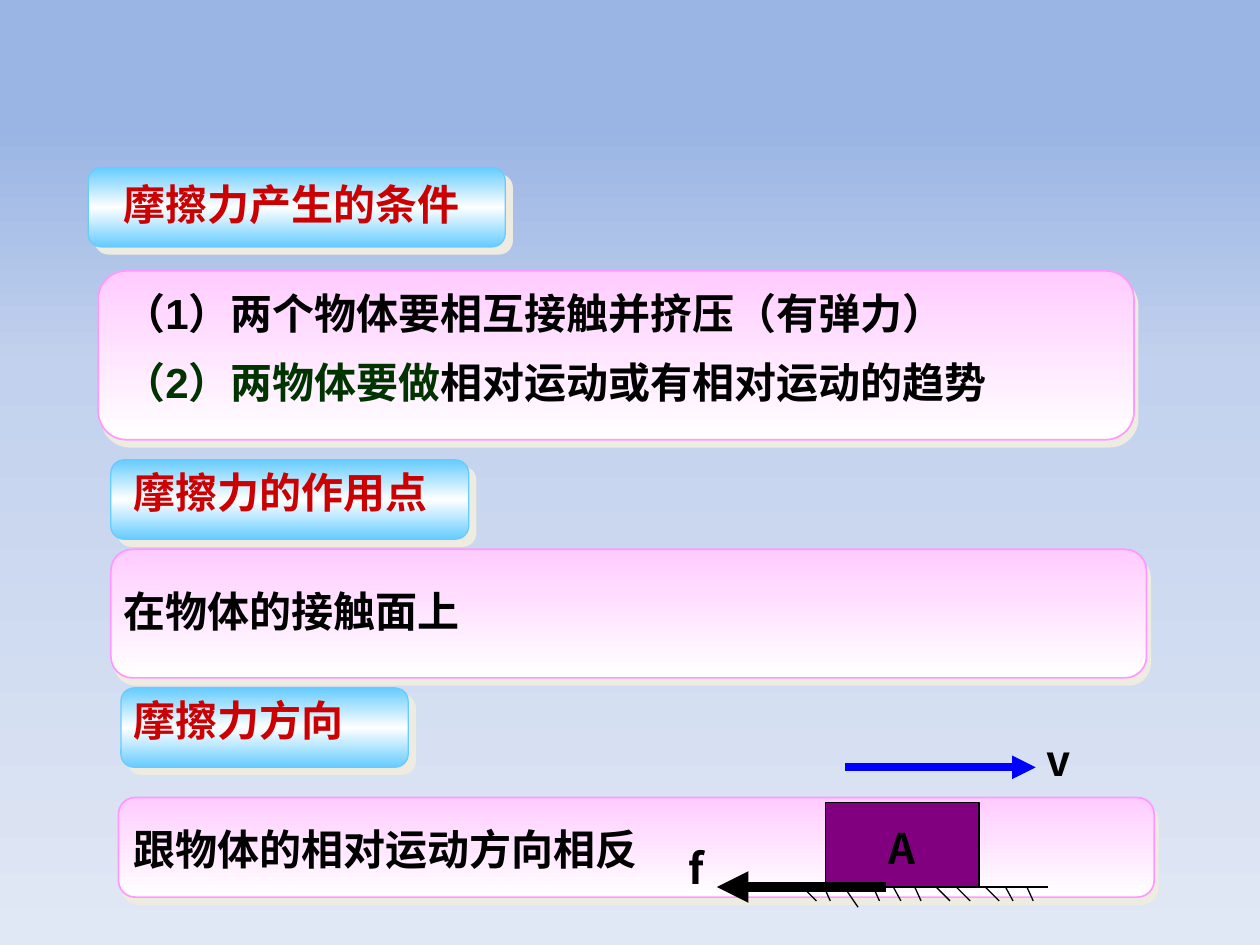
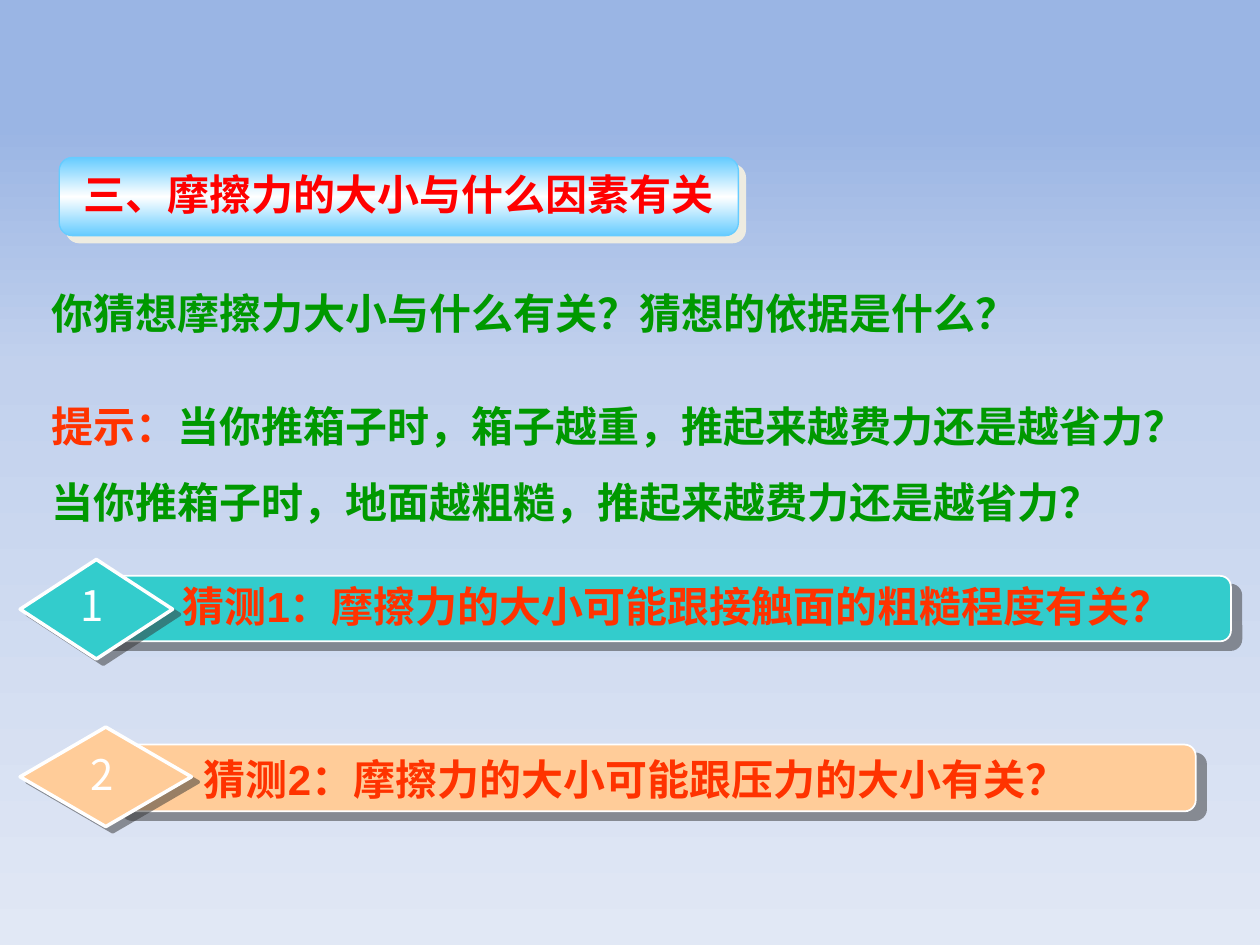
"""Build two slides on the conditions, direction and size of friction."""
import pptx
import pptx.util
import pptx.dml.color
import pptx.enum.shapes
import pptx.enum.text
import pptx.oxml
import pptx.oxml.ns
import lxml.etree

SHAPE = pptx.enum.shapes.MSO_SHAPE
ALIGN = pptx.enum.text.PP_ALIGN
QN = pptx.oxml.ns.qn

HUES = {
    "sky": "9AB5E4", "haze": "C2D1ED", "mist": "E1E8F5",
    "azure": "66CCFF", "white": "FFFFFF", "pink": "FFCCFF", "rose": "FF99FF",
    "cream": "EEECE1", "smoke": "333333", "black": "000000", "red": "CC0000",
    "bright": "FF0000", "flame": "FF3300", "pine": "003300", "green": "009900",
    "plum": "800080", "blue": "0000FF", "teal": "33CCCC", "peach": "FFCC99",
}
SKY = [(13, "sky"), (39, "haze"), (100, "mist")]
GLOSS = [(0, "azure"), (50, "white"), (100, "azure")]
BLUSH = [(0, "pink"), (100, "white")]
ARIAL, NOTO = "Arial", "Noto Sans CJK SC"
COLS, ROWS = 10, 7.5

LABEL = {"fill": GLOSS, "line": ("azure", 0.75), "shade": ("cream", 100, 5.7, 45)}
PANEL = {"fill": BLUSH, "line": ("rose", 1), "shade": ("cream", 100, 4.5, 63)}

LABELS = [(0.7, 1.33, 3.31, 0.63), (0.88, 3.65, 2.84, 0.63), (0.96, 5.46, 2.28, 0.63)]
PANELS = [(0.78, 2.15, 8.22, 1.34), (0.88, 4.36, 8.22, 1.02), (0.94, 6.33, 8.22, 0.79)]
CAUSE = ("摩擦力产生的条件", (0.88, 1.37, 3.39, 0.51))
RULES = [
    [("（1）两个物体要相互接触并挤压（有弹力）", "black")],
    [("（2）两物体要做", "pine"), ("相对运动或有相对运动的趋势", "black")],
]
NOTES = [
    ("摩擦力的作用点", "red", (0.96, 3.65, 2.91, 0.51)),
    ("在物体的接触面上", "black", (0.88, 4.6, 3.15, 0.5)),
    ("摩擦力方向", "red", (0.96, 5.46, 2.28, 0.51)),
    ("跟物体的相对运动方向相反", "black", (0.96, 6.49, 4.57, 0.5)),
]
BLOCK = (6.55, 6.37, 1.22, 0.67)
FLOOR = 7.04
HATCH = [(6.37, 0.11, 0.11), (6.54, 0.05, 0.11), (6.7, 0.11, 0.16), (6.93, 0.05, 0.11),
         (7.09, 0.06, 0.11), (7.26, 0.05, 0.11), (7.43, 0.11, 0.11), (7.59, 0.11, 0.11),
         (7.82, 0.11, 0.11), (7.98, 0.06, 0.11), (8.15, 0.05, 0.11)]
MARKS = [("f", (5.37, 6.64, 0.53, 0.51)), ("A", (6.95, 6.48, 0.45, 0.51)),
         ("v", (8.21, 5.78, 0.45, 0.51))]

TOPIC = ("三、摩擦力的大小与什么因素有关", (0.08, 1.29, 6.17, 0.51))
PLATE = (0.47, 1.25, 5.39, 0.62)
ASK = ("你猜想摩擦力大小与什么有关？猜想的依据是什么？", (0.31, 2.23, 9.42, 0.51))
HINT = [[("提示：", "flame"),
         ("当你推箱子时，箱子越重，推起来越费力还是越省力？当你推箱子时，地面越粗糙，推起来越费力还是越省力？",
          "green")]]
GUESS = [
    {"hue": "teal", "bar": (0.63, 4.57, 9.14, 0.52), "gem": (0.16, 4.44, 1.21, 0.79),
     "text": "猜测1：摩擦力的大小可能跟接触面的粗糙程度有关？", "box": (1.17, 4.56, 8.41, 0.91),
     "align": ALIGN.CENTER, "num": (0.44, 4.55, 0.58, 0.5)},
    {"hue": "peach", "bar": (0.88, 5.91, 8.61, 0.53), "gem": (0.16, 5.77, 1.36, 0.79),
     "text": "猜测2：摩擦力的大小可能跟压力的大小有关？", "box": (1.52, 5.93, 8.24, 0.51),
     "align": ALIGN.LEFT, "num": (0.46, 5.89, 0.7, 0.51)},
]

deck = pptx.Presentation()
deck.slide_width = pptx.util.Inches(COLS)
deck.slide_height = pptx.util.Inches(ROWS)
UNIT = deck.slide_width // COLS


def span(*parts):
    """Turn grid lengths into slide units."""
    return [round(part * UNIT) for part in parts]


def tint(name):
    """Give the colour of a name."""
    return pptx.dml.color.RGBColor.from_string(HUES[name])


def node(root, tag, **attrs):
    """Add a child element."""
    return lxml.etree.SubElement(root, QN(tag), {k: str(v) for k, v in attrs.items()})


def blend(fill, root, stops):
    """Fill from top to bottom through the stops."""
    fill.gradient()
    fill.gradient_angle = 270
    bands = next(root.iter(QN("a:gsLst")))
    for old in list(bands):
        bands.remove(old)
    for pos, name in stops:
        node(node(bands, "a:gs", pos=pos * 1000), "a:srgbClr", val=HUES[name])


def draw(slide, kind, at, fill, line, shade=None):
    """Add a filled shape with an outline and perhaps a shadow."""
    shape = slide.shapes.add_shape(kind, *span(*at))
    props = shape._element.spPr
    if isinstance(fill, str):
        shape.fill.solid()
        shape.fill.fore_color.rgb = tint(fill)
    else:
        blend(shape.fill, props, fill)
    shape.line.color.rgb = tint(line[0])
    shape.line.width = pptx.util.Pt(line[1])
    shape.shadow.inherit = False
    if shade:
        name, alpha, dist, turn = shade
        cast = node(props.find(QN("a:effectLst")), "a:outerShdw", blurRad=0,
                    dist=pptx.util.Pt(dist), dir=turn * 60000, algn="ctr", rotWithShape=0)
        node(node(cast, "a:srgbClr", val=HUES[name]), "a:alpha", val=alpha * 1000)


def link(slide, start, end, name="black", width=0.75, arrow=False):
    """Add a straight line, with an arrowhead if asked."""
    line = slide.shapes.add_connector(
        pptx.enum.shapes.MSO_CONNECTOR.STRAIGHT, *span(*start, *end))
    line.line.color.rgb = tint(name)
    line.line.width = pptx.util.Pt(width)
    if arrow:
        node(line.line._get_or_add_ln(), "a:tailEnd", type="triangle")
    node(line._element.spPr, "a:effectLst")


def write(slide, paras, at, holder=None, align=ALIGN.LEFT, font=ARIAL, bold=True,
          gap=0, pitch=1.0):
    """Write coloured runs in a placeholder or a new text box."""
    box = holder or slide.shapes.add_textbox(*span(*at))
    box.left, box.top, box.width, box.height = span(*at)
    slide.shapes._spTree.append(box._element)
    frame = box.text_frame
    frame.word_wrap = True
    frame.auto_size = pptx.enum.text.MSO_AUTO_SIZE.NONE
    frame.vertical_anchor = pptx.enum.text.MSO_ANCHOR.TOP
    for i, runs in enumerate(paras):
        para = frame.add_paragraph() if i else frame.paragraphs[0]
        para.alignment = align
        para.line_spacing = pitch
        para.space_before = pptx.util.Pt(gap if i else 0)
        if holder:
            props = para._p.get_or_add_pPr()
            props.set("marL", "0")
            props.set("indent", "0")
            node(props, "a:buNone")
        for text, name in runs:
            run = para.add_run()
            run.text = text
            run.font.size = pptx.util.Pt(24)
            run.font.name = font
            run.font.bold = bold
            run.font.color.rgb = tint(name)


def sheet():
    """Add a slide with a title and a body."""
    slide = deck.slides.add_slide(deck.slide_layouts[1])
    return slide, slide.shapes.title, slide.placeholders[1]


def causes():
    """Show when, where and which way friction acts."""
    slide, title, body = sheet()
    for spots, style in ((LABELS, LABEL), (PANELS, PANEL)):
        for at in spots:
            draw(slide, SHAPE.ROUNDED_RECTANGLE, at, **style)
    write(slide, [[(CAUSE[0], "red")]], CAUSE[1], title)
    write(slide, RULES, (0.88, 2.23, 8.42, 1.05), body, gap=11)
    for text, name, at in NOTES:
        write(slide, [[(text, name)]], at)
    draw(slide, SHAPE.RECTANGLE, BLOCK, "plum", ("black", 0.75))
    link(slide, (5.92, FLOOR), (8.32, FLOOR))
    for x, run, drop in HATCH:
        link(slide, (x, FLOOR), (x + run, FLOOR + drop))
    link(slide, (6.71, 6.09), (8.22, 6.09), "blue", 4.5, True)
    for text, at in MARKS:
        write(slide, [[(text, "black")]], at, font=NOTO)
    link(slide, (7.03, FLOOR), (5.69, FLOOR), "black", 6, True)


def guesses():
    """Ask what sets the size of friction."""
    slide, title, body = sheet()
    write(slide, [[(ASK[0], "green")]], ASK[1])
    for i, item in enumerate(GUESS, 1):
        hue = item["hue"]
        draw(slide, SHAPE.ROUNDED_RECTANGLE, item["bar"], hue, ("white", 1),
             ("smoke", 50, 7.8, 40))
        draw(slide, SHAPE.DIAMOND, item["gem"], hue, ("white", 2), ("smoke", 50, 5, 37))
        write(slide, [[(item["text"], "flame")]], item["box"], align=item["align"])
        write(slide, [[(str(i), "white")]], item["num"], align=ALIGN.CENTER,
              font=NOTO, bold=False)
    write(slide, HINT, (0.31, 2.93, 9.53, 1.92), body, pitch=1.5)
    draw(slide, SHAPE.ROUNDED_RECTANGLE, PLATE, **LABEL)
    write(slide, [[(TOPIC[0], "bright")]], TOPIC[1], title, ALIGN.CENTER)


def main():
    """Paint the shared background, build the slides and save."""
    master = deck.slide_master
    blend(master.background.fill, master.element, SKY)
    causes()
    guesses()
    deck.save("out.pptx")


if __name__ == "__main__":
    main()
